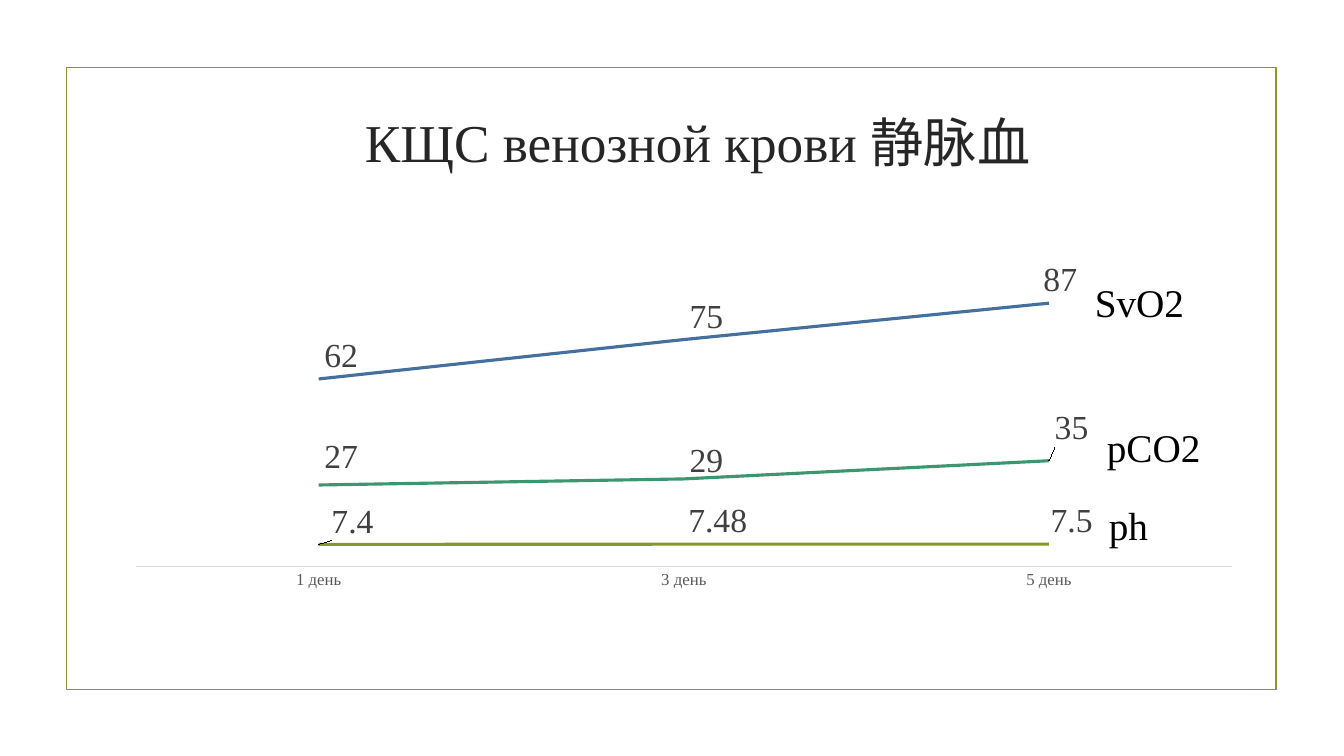
from lxml import etree
from pptx import Presentation
from pptx import util as u
from pptx.chart import data as cd
from pptx.dml.color import RGBColor
from pptx.enum import chart as ch, shapes, text
from pptx.oxml import ns

FONT = "Times New Roman"
HUES = {"frame": "83992A", "title": "262626", "text": "000000", "label": "404040",
        "tick": "595959", "axis": "D9D9D9",
        "ph": "83992A", "gas": "3C9770", "sat": "44709D"}
DAYS = ["1 день", "3 день", "5 день"]
# name, colour, values, shift of each value label as a share of the chart
LINES = [
    ("Series 1", "ph", (7.4, 7.48, 7.5), ((0.03, 0), (0.03, 0), (0.02, 0))),
    ("Series 2", "gas", (27, 29, 35), ((0.02, -0.01), (0.02, 0.01), (0.02, -0.02))),
    ("Series 3", "sat", (62, 75, 87), ((0.02, 0), (0.02, 0), (0.01, 0))),
]
# text, left and top within the chart's box, width
NAMES = [("SvO2", 9.6, 0.77, 1.29), ("pCO2", 9.72, 2.21, 1.29), ("ph", 9.74, 2.98, 1)]


def hue(key):
    return RGBColor.from_string(HUES[key])


def style(font, size, key):
    font.name, font.size = FONT, u.Pt(size)
    font.color.rgb = hue(key)


def write(frame, words, size=28, key="text", align=text.PP_ALIGN.LEFT,
          anchor=text.MSO_ANCHOR.TOP):
    frame.word_wrap = True
    frame.auto_size = text.MSO_AUTO_SIZE.NONE
    frame.vertical_anchor = anchor
    para = frame.paragraphs[0]
    para.alignment = align
    run = para.add_run()
    run.text = words
    style(run.font, size, key)


def inches(*box):
    return [u.Inches(n) for n in box]


def place(parent, index, **fields):
    """Give a chart part a manual layout, as shares of the chart."""
    for old in parent.findall(ns.qn("c:layout")):
        parent.remove(old)
    layout = etree.Element(ns.qn("c:layout"))
    manual = etree.SubElement(layout, ns.qn("c:manualLayout"))
    for name, value in fields.items():
        etree.SubElement(manual, ns.qn("c:" + name)).set("val", str(value))
    parent.insert(index, layout)


def add_frame(slide, box):
    frame = slide.shapes.add_shape(shapes.MSO_SHAPE.RECTANGLE, *inches(*box))
    frame.shadow.inherit = False
    frame.fill.background()
    frame.line.color.rgb = hue("frame")
    frame.line.width = u.Pt(1.25)


def add_title(slide, box):
    title = slide.shapes.title
    title.left, title.top, title.width, title.height = inches(*box)
    write(title.text_frame, "КЩС венозной крови 静脉血", size=38, key="title",
          align=text.PP_ALIGN.CENTER, anchor=text.MSO_ANCHOR.MIDDLE)


def style_axes(chart):
    days, scale = chart.category_axis, chart.value_axis
    days.major_tick_mark = days.minor_tick_mark = ch.XL_TICK_MARK.NONE
    days.format.line.color.rgb = hue("axis")
    days.format.line.width = u.Pt(0.75)
    style(days.tick_labels.font, 12, "tick")
    scale.minimum_scale, scale.maximum_scale = 0, 100
    scale.has_major_gridlines = False
    scale.visible = False


def style_line(line, key, shifts):
    line.smooth = False
    line.marker.style = ch.XL_MARKER_STYLE.NONE
    line.format.line.color.rgb = hue(key)
    line.format.line.width = u.Pt(2.25)
    for i in range(len(shifts)):
        label = line.points[i].data_label
        style(label.font, 24, "label")
        label.position = ch.XL_LABEL_POSITION.ABOVE
    for part, (x, y) in zip(line._element.xpath(".//c:dLbl"), shifts):
        place(part, 1, x=x, y=y)


def add_graph(slide, box):
    data = cd.CategoryChartData()
    data.categories = DAYS
    for name, _, values, _ in LINES:
        data.add_series(name, values)
    chart = slide.shapes.add_chart(ch.XL_CHART_TYPE.LINE, *inches(*box), data).chart
    chart.has_title = chart.has_legend = False
    style(chart.font, 10, "text")
    plot = chart.plots[0]
    plot.vary_by_categories = False
    style_axes(chart)
    for line, (_, key, _, shifts) in zip(plot.series, LINES):
        style_line(line, key, shifts)
    area = chart._chartSpace.xpath(".//c:plotArea")[0]
    place(area, 0, layoutTarget="inner", xMode="edge", yMode="edge",
          x=0.017, y=0.145, w=0.971, h=0.644)


def add_names(slide, box):
    left, top = box[:2]
    for words, x, y, width in NAMES:
        name = slide.shapes.add_textbox(*inches(left + x, top + y, width, 0.57))
        write(name.text_frame, words)


def main():
    deck = Presentation()
    deck.slide_width, deck.slide_height = inches(13.33, 7.5)
    slide = deck.slides.add_slide(deck.slide_layouts[5])
    graph = (1.16, 1.94, 11.19, 4.67)
    add_frame(slide, (0.66, 0.67, 12, 6.17))
    add_title(slide, (1.67, 0.97, 10.5, 0.87))
    add_graph(slide, graph)
    add_names(slide, graph)
    deck.save("out.pptx")


if __name__ == "__main__":
    main()
